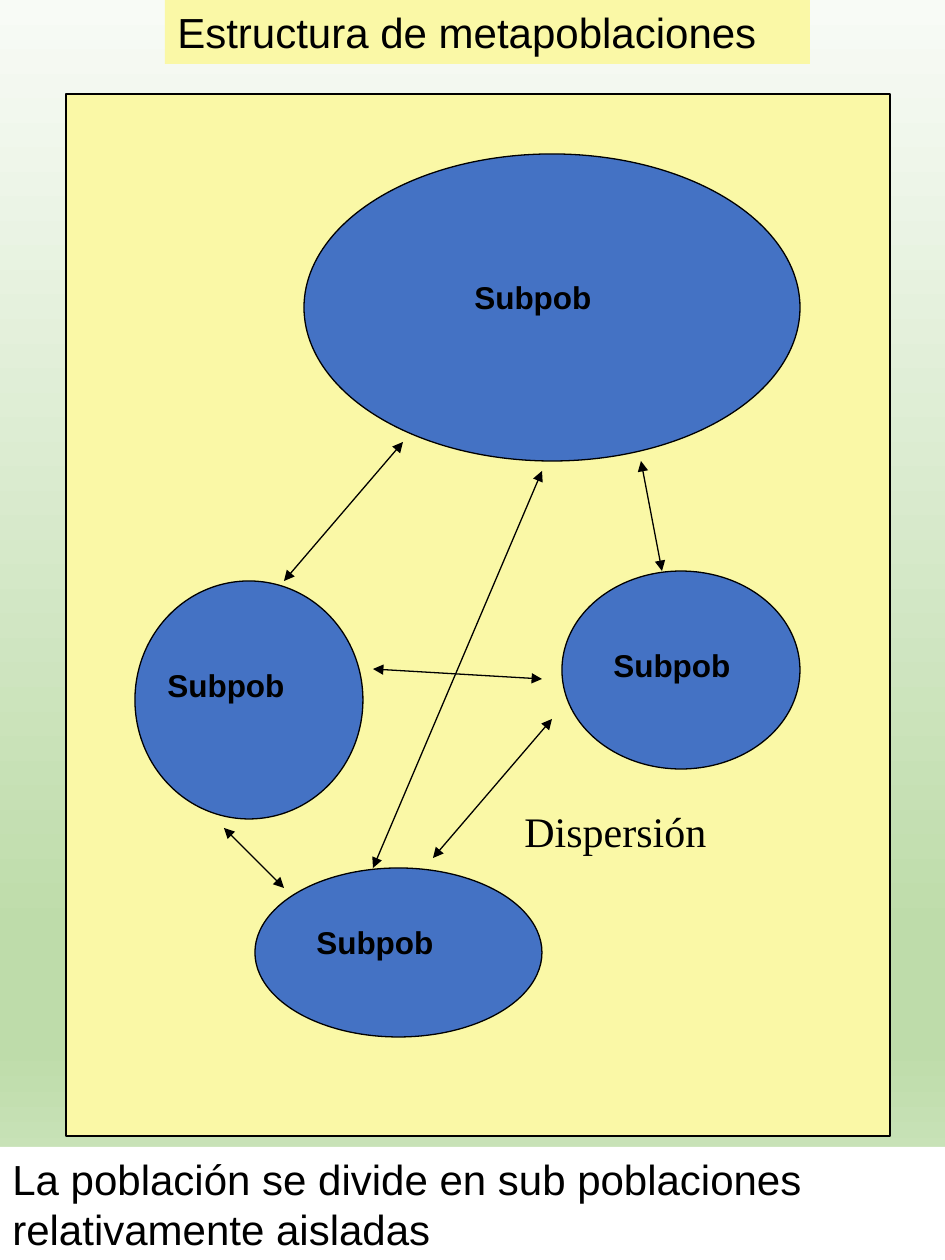
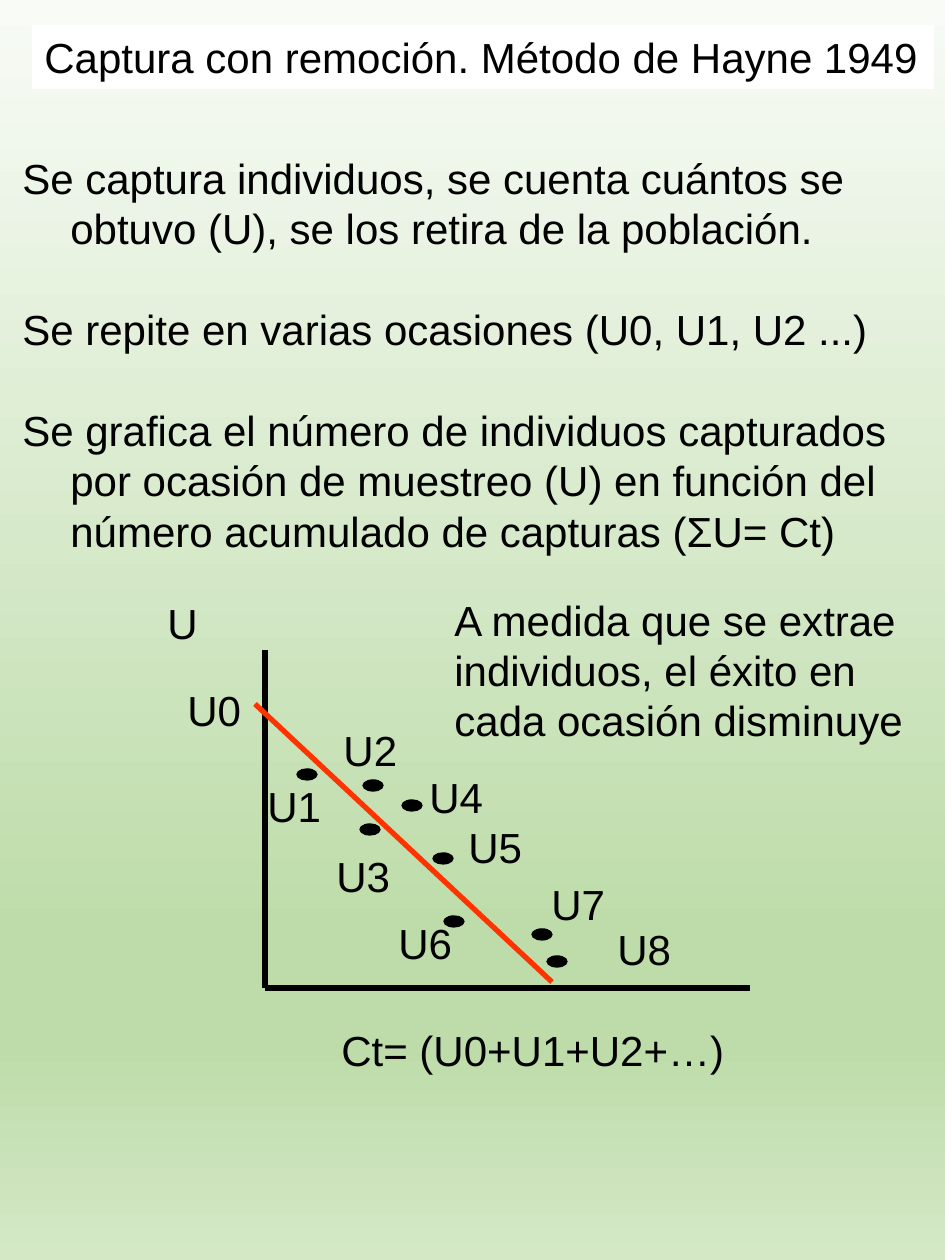
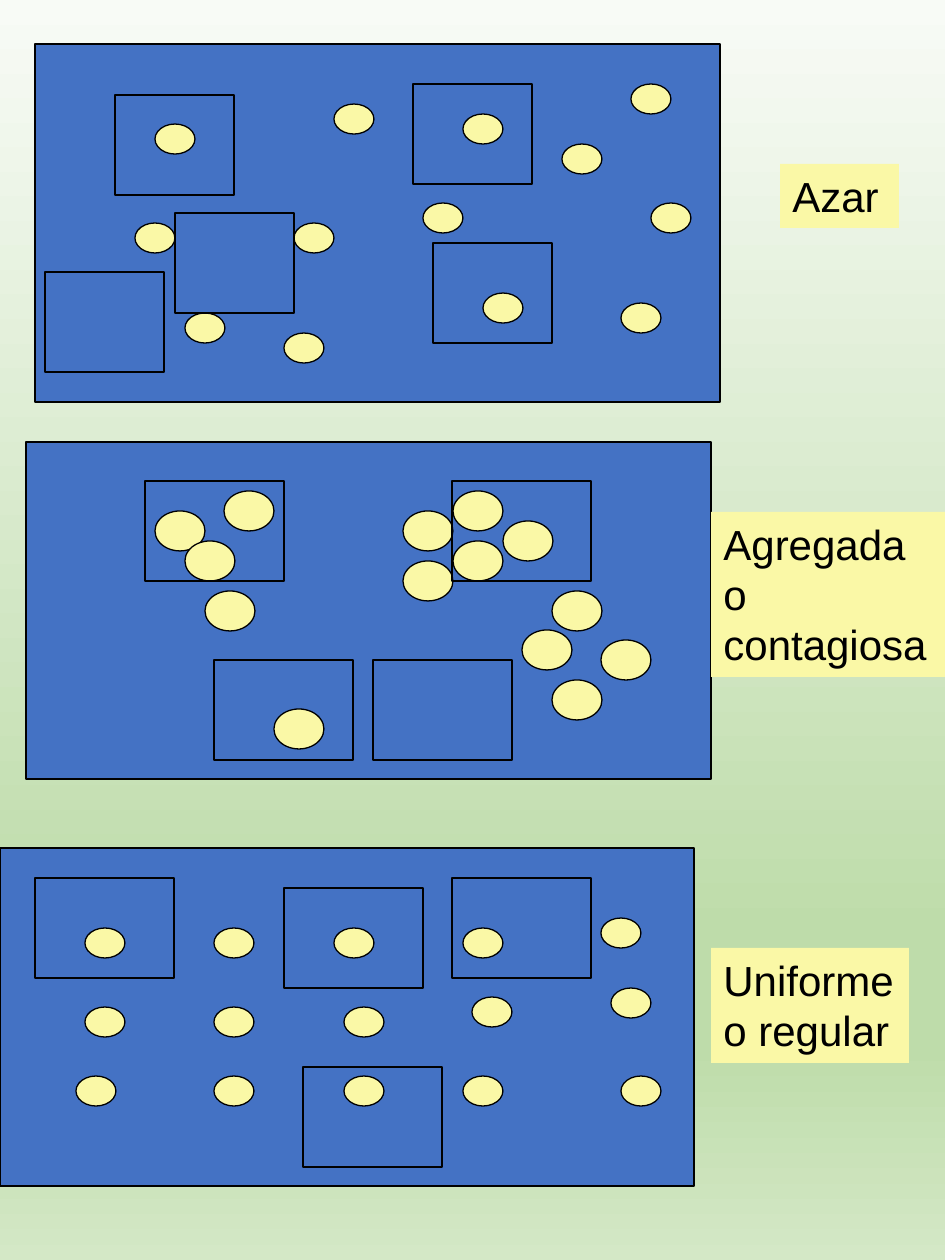
from lxml import etree
from pptx import Presentation
from pptx.dml.color import RGBColor
from pptx.enum.shapes import MSO_CONNECTOR, MSO_SHAPE
from pptx.enum.text import MSO_ANCHOR, MSO_AUTO_SIZE, PP_ALIGN
from pptx.oxml.ns import qn
from pptx.util import Emu, Pt

RECTANGLE = MSO_SHAPE.RECTANGLE
ELLIPSE = MSO_SHAPE.OVAL
STRAIGHT = MSO_CONNECTOR.STRAIGHT
TOP = MSO_ANCHOR.TOP
GROW = MSO_AUTO_SIZE.SHAPE_TO_FIT_TEXT
LEFT = PP_ALIGN.LEFT

COLORS = {
    "ink": "000000",
    "white": "FFFFFF",
    "blue": "4472C4",
    "cream": "FAF8A6",
    "red": "FF3300",
}
BACKGROUND_STOPS = [(0, "F8FBF6"), (74, "BEDCAA"), (83, "BEDCAA"), (100, "D4E8C6")]
EMU_PER_PX = 914400 / 126


def px(length):
    return Emu(round(length * EMU_PER_PX))


def color(name):
    return RGBColor.from_string(COLORS[name])


class SlideMaker:
    def __init__(self):
        self.deck = Presentation()
        self.deck.slide_width = px(945)
        self.deck.slide_height = px(1260)
        self.page = None
        self.paint_background()

    def paint_background(self):
        master = self.deck.slide_master
        master.background.fill.gradient()
        gradient = master.element.find(".//" + qn("p:bgPr")).find(qn("a:gradFill"))
        stops = gradient.find(qn("a:gsLst"))
        for stop in list(stops):
            stops.remove(stop)
        for percent, value in BACKGROUND_STOPS:
            stop = etree.SubElement(stops, qn("a:gs"), pos=str(percent * 1000))
            etree.SubElement(stop, qn("a:srgbClr"), val=value)
        gradient.find(qn("a:lin")).set("ang", "5400000")

    def new_page(self):
        self.page = self.deck.slides.add_slide(self.deck.slide_layouts[6])

    def shape(self, kind, left, top, width, height, fill=None, outlined=True, parent=None):
        shapes = (parent or self.page).shapes
        box = shapes.add_shape(kind, px(left), px(top), px(width), px(height))
        box.shadow.inherit = False
        if fill:
            box.fill.solid()
            box.fill.fore_color.rgb = color(fill)
        else:
            box.fill.background()
        if outlined:
            box.line.color.rgb = color("ink")
            box.line.width = Pt(0.75)
        else:
            box.line.fill.background()
        return box

    def dots(self, places, width, height, fill):
        group = self.page.shapes.add_group_shape()
        for left, top in places:
            self.shape(ELLIPSE, left, top, width, height, fill, parent=group)

    def line(self, start, end, stroke="ink", weight=0.75, arrows=False):
        connector = self.page.shapes.add_connector(
            STRAIGHT, px(start[0]), px(start[1]), px(end[0]), px(end[1]))
        connector.line.color.rgb = color(stroke)
        connector.line.width = Pt(weight)
        properties = connector.element.spPr
        if arrows:
            for tip in ("a:headEnd", "a:tailEnd"):
                etree.SubElement(properties.find(qn("a:ln")), qn(tip), type="triangle")
        etree.SubElement(properties, qn("a:effectLst"))

    def text(self, words, left, top, width, height=64, fill=None,
             size=24, bold=False, font="Arial", hanging=0, gap=0):
        if fill:
            box = self.shape(RECTANGLE, left, top, width, height, fill, outlined=False)
        else:
            box = self.page.shapes.add_textbox(px(left), px(top), px(width), px(height))
        frame = box.text_frame
        frame.text = words
        frame.word_wrap = True
        frame.auto_size = GROW
        frame.vertical_anchor = TOP
        for index, para in enumerate(frame.paragraphs):
            para.alignment = LEFT
            if hanging:
                layout = para._p.get_or_add_pPr()
                layout.set("marL", str(px(hanging)))
                layout.set("indent", str(-px(hanging)))
            if gap and index:
                para.space_before = Pt(gap)
            for span in para.runs:
                span.font.name = font
                span.font.size = Pt(size)
                span.font.bold = bold
                span.font.color.rgb = color("ink")


def metapopulation(maker):
    maker.new_page()
    maker.shape(RECTANGLE, 66, 94, 824, 1042, "cream")
    subpopulations = [
        (135, 581, 228, 238), (304, 154, 496, 307),
        (562, 571, 238, 198), (255, 868, 287, 169),
    ]
    for place in subpopulations:
        maker.shape(ELLIPSE, *place, "blue")
    maker.text("Estructura de metapoblaciones", 165, 0, 645, fill="cream")
    maker.text("La población se divide en sub poblaciones relativamente aisladas",
               0, 1147, 945, 115, fill="white")
    dispersals = [
        ((403, 442), (284, 581)), ((641, 461), (662, 571)), ((542, 471), (373, 868)),
        ((552, 719), (433, 858)), ((542, 679), (373, 669)), ((224, 828), (284, 888)),
    ]
    for start, end in dispersals:
        maker.line(start, end, arrows=True)
    maker.text("Dispersión", 512, 799, 208, font="Times New Roman")
    for left, top in [(462, 272), (304, 917), (155, 660), (601, 640)]:
        maker.text("Subpob", left, top, 179, 50, size=18, bold=True)


def removal_capture(maker):
    maker.new_page()
    steps = [
        "Se captura individuos, se cuenta cuántos se obtuvo (U), se los retira de la población.",
        "Se repite en varias ocasiones (U0, U1, U2 ...)",
        "Se grafica el número de individuos capturados por ocasión de muestreo (U) "
        "en función del número acumulado de capturas (ΣU= Ct)",
    ]
    maker.text("\n".join(steps), 10, 146, 945, 421, hanging=48, gap=28.8)
    maker.text("Captura con remoción. Método de Hayne 1949", 32, 25, 902, fill="white")
    origin = (265, 988)
    maker.line((265, 650), origin, weight=3)
    maker.line(origin, (750, 988), weight=3)
    maker.line((255, 704), (552, 982), "red", 3)
    captures = [
        (360, 824), (402, 800), (433, 853), (444, 916),
        (532, 929), (547, 956), (297, 769), (363, 780),
    ]
    for left, top in captures:
        maker.shape(ELLIPSE, left, top, 20, 11, "ink")
    labels = [
        ("U", 155, 591, 59), ("Ct= (U0+U1+U2+…)", 329, 1018, 465),
        ("U0", 175, 678, 87), ("U1", 255, 774, 87), ("U3", 324, 844, 87),
        ("U2", 331, 718, 79), ("U4", 417, 765, 87), ("U6", 386, 911, 87),
        ("U5", 456, 815, 87), ("U8", 605, 917, 125), ("U7", 539, 872, 125),
    ]
    for label in labels:
        maker.text(*label)
    maker.text("A medida que se extrae individuos, el éxito en cada ocasión disminuye",
               442, 588, 486, 165)


def spatial_patterns(maker):
    maker.new_page()
    random_dots = [
        (155, 124), (631, 84), (483, 293), (463, 114), (621, 303), (185, 313), (562, 144),
        (334, 104), (294, 223), (651, 203), (135, 223), (423, 203), (284, 333),
    ]
    clumped_dots = [
        (155, 511), (185, 541), (503, 521), (205, 591), (274, 709), (224, 491), (403, 561),
        (403, 511), (453, 541), (453, 491), (552, 680), (601, 640), (522, 630), (552, 591),
    ]
    regular_dots = [
        (85, 928), (214, 928), (334, 928), (463, 928), (601, 918),
        (85, 1007), (214, 1007), (344, 1007), (472, 997), (611, 988),
        (76, 1076), (214, 1076), (344, 1076), (463, 1076), (621, 1076),
    ]
    patterns = [
        ((35, 44, 685, 358), random_dots, (40, 30), ("Azar", 780, 164, 119, 64),
         [(433, 243), (115, 95), (413, 84), (175, 213), (45, 272)], 119),
        ((26, 442, 685, 337), clumped_dots, (50, 40),
         ("Agregada o contagiosa", 711, 512, 234, 165),
         [(145, 481), (214, 660), (452, 481), (373, 660)], 139),
        ((0, 848, 694, 338), regular_dots, (40, 30),
         ("Uniforme o regular", 711, 948, 198, 115),
         [(452, 878), (284, 888), (35, 878), (303, 1067)], 139),
    ]
    for plot, dots, dot_size, label, quadrats, quadrat_width in patterns:
        maker.shape(RECTANGLE, *plot, "blue")
        maker.dots(dots, *dot_size, "cream")
        maker.text(*label, fill="cream")
        for left, top in quadrats:
            maker.shape(RECTANGLE, left, top, quadrat_width, 100)


def main():
    maker = SlideMaker()
    metapopulation(maker)
    removal_capture(maker)
    spatial_patterns(maker)
    maker.deck.save("out.pptx")


if __name__ == "__main__":
    main()
